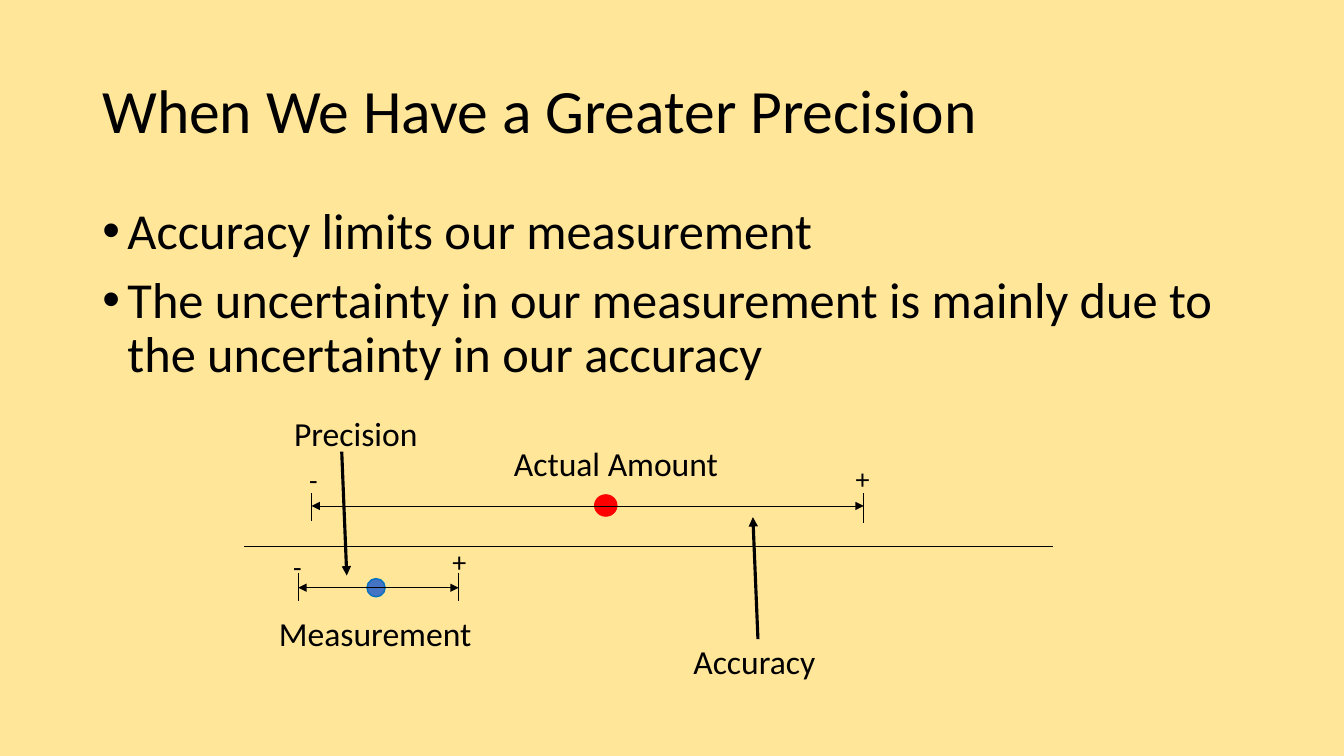
from dataclasses import dataclass

from lxml.etree import SubElement
from pptx import Presentation
from pptx.dml.color import RGBColor
from pptx.enum.shapes import MSO_CONNECTOR, MSO_SHAPE
from pptx.enum.text import MSO_ANCHOR
from pptx.oxml.ns import qn
from pptx.slide import Slide
from pptx.util import Pt


@dataclass(frozen=True)
class Theme:
    font: str = "Calibri"
    background: str = "FFE699"
    ink: str = "000000"
    actual: str = "FF0000"
    measured: str = "4472C4"
    measured_edge: str = "0070C0"
    title_size: float = 44
    body_size: float = 36
    label_size: float = 24
    sign_size: float = 20
    thin: float = 0.5
    edge: float = 1
    thick: float = 2.25


@dataclass(frozen=True)
class Box:
    left: float
    top: float
    width: float
    height: float

    def lengths(self) -> tuple[Pt, Pt, Pt, Pt]:
        return Pt(self.left), Pt(self.top), Pt(self.width), Pt(self.height)


@dataclass(frozen=True)
class Label:
    text: str
    box: Box
    wrap: bool = True


@dataclass(frozen=True)
class Pointer:
    start: tuple[float, float]
    end: tuple[float, float]


@dataclass(frozen=True)
class Interval:
    left: float
    right: float
    axis: float
    tick_top: float
    tick_bottoms: tuple[float, float]
    dot: Box
    fill: str
    edge: str
    minus: Box
    plus: Box


THEME = Theme()

TITLE = "When We Have a Greater Precision"
TITLE_BOX = Box(66, 28.75, 828, 104.4)
POINTS = [
    "Accuracy limits our measurement",
    "The uncertainty in our measurement is mainly due to the uncertainty in our accuracy",
]
POINTS_BOX = Box(66, 143.75, 828, 342.6)

INTERVALS = [
    Interval(213.1, 327.6, 419.8, 409, (429.1, 429.1),
             Box(262.1, 413.3, 13, 13), THEME.measured, THEME.measured_edge,
             Box(202.3, 387.4, 26, 35.3), Box(316.1, 383.8, 26, 35.3)),
    Interval(222.5, 617, 361.4, 352.1, (372.2, 373.7),
             Box(424.8, 353.5, 15.8, 15.1), THEME.actual, THEME.actual,
             Box(213.8, 325.4, 26, 35.3), Box(604.1, 324.7, 54, 35.3)),
]
LABELS = [
    Label("Measurement", Box(192.2, 432, 152.6, 72), wrap=False),
    Label("Accuracy", Box(488.2, 452.2, 110.2, 39.6)),
    Label("Actual Amount", Box(360, 311, 222.5, 39.6)),
    Label("Precision", Box(203, 289.4, 110.2, 39.6)),
]
POINTERS = [
    Pointer((541.4, 456.5), (537.8, 369.4)),
    Pointer((244.1, 322.6), (247.7, 411.1)),
]
SCALE = Pointer((174.2, 390.2), (752.4, 390.2))


def add_text(slide: Slide, box: Box, *paragraphs: str, size: float,
             spacing: float = 1.07, before: float = 0, after: float = 8,
             bullet: bool = False, wrap: bool = True,
             anchor: MSO_ANCHOR = MSO_ANCHOR.TOP) -> None:
    frame = slide.shapes.add_textbox(*box.lengths()).text_frame
    frame.word_wrap = wrap
    frame.vertical_anchor = anchor
    for index, text in enumerate(paragraphs):
        paragraph = frame.paragraphs[0] if index == 0 else frame.add_paragraph()
        paragraph.line_spacing = spacing
        paragraph.space_before = Pt(before)
        paragraph.space_after = Pt(after)
        if bullet:
            properties = paragraph._p.get_or_add_pPr()
            properties.set("marL", str(Pt(18)))
            properties.set("indent", str(-Pt(18)))
            SubElement(properties, qn("a:buFont")).set("typeface", "Arial")
            SubElement(properties, qn("a:buChar")).set("char", "•")
        run = paragraph.add_run()
        run.text = text
        run.font.name = THEME.font
        run.font.size = Pt(size)
        run.font.color.rgb = RGBColor.from_string(THEME.ink)


def add_line(slide: Slide, start: tuple[float, float], end: tuple[float, float],
             width: float = THEME.thin, arrows: tuple[str, ...] = ()) -> None:
    line = slide.shapes.add_connector(
        MSO_CONNECTOR.STRAIGHT, *(Pt(value) for value in (*start, *end)))
    line.line.width = Pt(width)
    line.line.color.rgb = RGBColor.from_string(THEME.ink)
    outline = line.line._get_or_add_ln()
    for arrow in arrows:
        SubElement(outline, qn(f"a:{arrow}")).set("type", "triangle")
    SubElement(line._element.spPr, qn("a:effectLst"))


def add_dot(slide: Slide, box: Box, fill: str, edge: str) -> None:
    dot = slide.shapes.add_shape(MSO_SHAPE.OVAL, *box.lengths())
    dot.shadow.inherit = False
    dot.fill.solid()
    dot.fill.fore_color.rgb = RGBColor.from_string(fill)
    dot.line.color.rgb = RGBColor.from_string(edge)
    dot.line.width = Pt(THEME.edge)


def add_interval(slide: Slide, interval: Interval) -> None:
    add_dot(slide, interval.dot, interval.fill, interval.edge)
    ends = (interval.left, interval.right)
    for x, bottom in zip(ends, interval.tick_bottoms):
        add_line(slide, (x, interval.tick_top), (x, bottom))
    add_line(slide, (interval.left, interval.axis), (interval.right, interval.axis),
             arrows=("headEnd", "tailEnd"))
    for sign, box in (("-", interval.minus), ("+", interval.plus)):
        add_text(slide, box, sign, size=THEME.sign_size)


def main() -> None:
    deck = Presentation()
    deck.slide_width, deck.slide_height = Pt(960), Pt(540)
    slide = deck.slides.add_slide(deck.slide_layouts[6])
    slide.background.fill.solid()
    slide.background.fill.fore_color.rgb = RGBColor.from_string(THEME.background)

    add_text(slide, TITLE_BOX, TITLE, size=THEME.title_size, spacing=0.9, after=0,
             anchor=MSO_ANCHOR.MIDDLE)
    add_text(slide, POINTS_BOX, *POINTS, size=THEME.body_size, spacing=0.9,
             before=10, after=0, bullet=True)

    add_line(slide, SCALE.start, SCALE.end)
    for interval in INTERVALS:
        add_interval(slide, interval)
    for label in LABELS:
        add_text(slide, label.box, label.text, size=THEME.label_size, wrap=label.wrap)
    for pointer in POINTERS:
        add_line(slide, pointer.start, pointer.end, THEME.thick, ("tailEnd",))

    deck.save("out.pptx")


if __name__ == "__main__":
    main()
